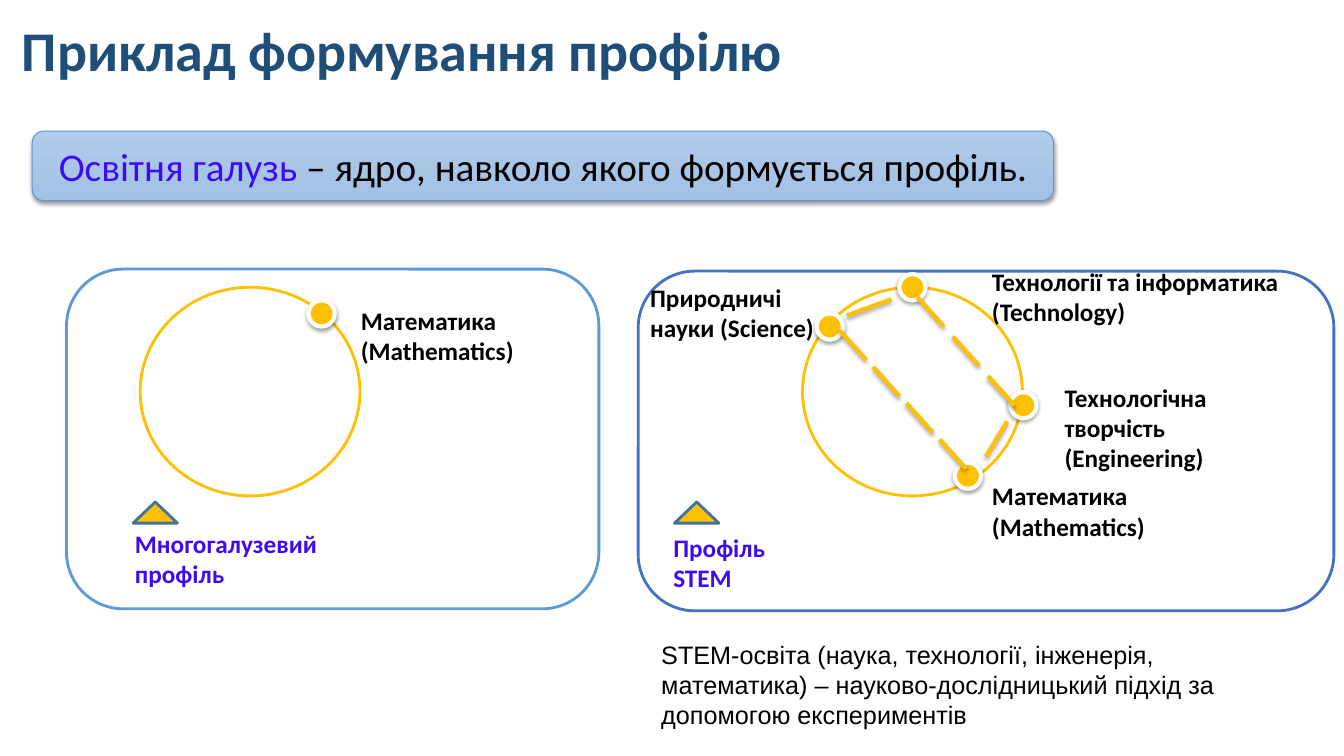
from lxml.etree import SubElement
from pptx import Presentation
from pptx.dml.color import RGBColor
from pptx.enum.shapes import MSO_CONNECTOR as LINK, MSO_SHAPE as KIND
from pptx.enum.text import MSO_ANCHOR as ANCHOR, PP_ALIGN as ALIGN
from pptx.oxml.ns import qn
from pptx.util import Inches, Pt

NAVY = RGBColor(0x1F, 0x4E, 0x79)
VIOLET = RGBColor(0x3D, 0x0A, 0xF6)
BLACK = RGBColor(0, 0, 0)
WHITE = RGBColor(0xFF, 0xFF, 0xFF)
GOLD = RGBColor(0xFF, 0xC0, 0x00)
SKY = RGBColor(0x5B, 0x9B, 0xD5)
BLUE = RGBColor(0x44, 0x72, 0xC4)
STEEL = RGBColor(0x43, 0x72, 0x9D)
PALE = RGBColor(0xB1, 0xCB, 0xE9)
MIST = RGBColor(0xA2, 0xC1, 0xE4)


def add_shade(item, alpha=0, dist=1.6):
    effects = SubElement(item._element.spPr, qn("a:effectLst"))
    if alpha:
        shade = SubElement(effects, qn("a:outerShdw"), blurRad=str(Pt(3.1)),
                           dist=str(Pt(dist)), dir="5400000", rotWithShape="0")
        color = SubElement(shade, qn("a:srgbClr"), val=str(BLACK))
        SubElement(color, qn("a:alpha"), val=str(alpha * 1000))


def add_form(slide, kind, box, fill, line, width=2, alpha=0):
    form = slide.shapes.add_shape(kind, *map(Inches, box))
    if isinstance(fill, RGBColor):
        form.fill.solid()
        form.fill.fore_color.rgb = fill
    else:
        form.fill.gradient()
        form.fill.gradient_angle = 270
        for stop, color, place in zip(form.fill.gradient_stops, fill, (0, 1)):
            stop.color.rgb = color
            stop.position = place
    form.line.color.rgb = line
    form.line.width = Pt(width)
    add_shade(form, alpha)
    return form


def add_run(para, text, size, color, bold=False, font="Calibri"):
    run = para.add_run()
    run.text = text
    run.font.name = font
    run.font.size = Pt(size)
    run.font.bold = bold
    run.font.color.rgb = color


def add_label(slide, box, lines, color=BLACK, size=18, bold=True, font="Calibri"):
    frame = slide.shapes.add_textbox(*map(Inches, box)).text_frame
    frame.word_wrap = True
    for index, line in enumerate(lines):
        para = frame.add_paragraph() if index else frame.paragraphs[0]
        add_run(para, line, size, color, bold, font)


def add_banner(slide):
    banner = add_form(slide, KIND.ROUNDED_RECTANGLE, (0.32, 1.3, 10.13, 0.69),
                      (PALE, MIST), SKY, 0.75, 38)
    frame = banner.text_frame
    frame.word_wrap = True
    frame.vertical_anchor = ANCHOR.MIDDLE
    para = frame.paragraphs[0]
    para.alignment = ALIGN.CENTER
    add_run(para, "Освітня галузь ", 28, VIOLET)
    add_run(para, "– ядро, навколо якого формується профіль.", 28, BLACK)


def add_ring(slide, left, dots):
    add_form(slide, KIND.OVAL, (left, 2.85, 2.18, 2.07), WHITE, GOLD)
    for x, y in dots:
        add_form(slide, KIND.OVAL, (x, y, 0.26, 0.26), GOLD, WHITE, 3, 38)


def add_chord(slide, start, dash, step=(0, 0), count=1):
    for index in range(count):
        x, y = (s + index * gap for s, gap in zip(start, step))
        ends = x, y, x + dash[0], y + dash[1]
        link = slide.shapes.add_connector(LINK.STRAIGHT, *map(Inches, ends))
        link.line.color.rgb = GOLD
        link.line.width = Pt(3)
        add_shade(link, 35, 1.8)


def add_mark(slide, left):
    add_form(slide, KIND.ISOSCELES_TRIANGLE, (left, 4.98, 0.44, 0.21), GOLD, STEEL)


def main():
    deck = Presentation()
    deck.slide_width, deck.slide_height = Inches(13.33), Inches(7.5)
    slide = deck.slides.add_slide(deck.slide_layouts[6])

    add_label(slide, (0.12, 0.11, 8.93, 0.76), ["Приклад формування профілю"], NAVY, 40)
    add_banner(slide)
    for box, line in (((0.66, 2.67, 5.28, 3.37), SKY), ((6.33, 2.69, 6.9, 3.37), BLUE)):
        add_form(slide, KIND.ROUNDED_RECTANGLE, box, WHITE, line)

    maths = ["Математика", "(Mathematics)"]
    add_ring(slide, 1.39, [(3.06, 2.98)])
    add_label(slide, (3.48, 2.98, 1.91, 0.7), maths)
    add_label(slide, (1.24, 5.19, 3.88, 0.7), ["Многогалузевий", "профіль"], VIOLET)
    add_mark(slide, 1.32)

    add_ring(slide, 7.96, [(9.47, 4.59), (10.02, 3.89), (8.92, 2.72), (8.1, 3.11)])
    add_chord(slide, (8.33, 3.28), (0.26, 0.29), (0.33, 0.36), 4)
    add_chord(slide, (8.4, 3.13), (0.44, -0.16))
    add_chord(slide, (9.78, 4.53), (0.21, -0.35))
    add_chord(slide, (9.1, 2.95), (0.26, 0.29), (0.35, 0.39), 3)
    add_label(slide, (9.74, 4.72, 1.91, 0.7), maths)
    add_label(slide, (10.46, 3.74, 1.91, 1), ["Технологічна творчість (Engineering)"])
    add_label(slide, (9.74, 2.59, 3.37, 0.7), ["Технології та інформатика (Technology)"])
    add_label(slide, (6.35, 2.75, 1.91, 0.7), ["Природничі науки (Science)"])
    add_label(slide, (6.58, 5.23, 3.88, 0.7), ["Профіль", "STEM"], VIOLET)
    add_mark(slide, 6.69)

    add_label(slide, (6.46, 6.29, 6.29, 1.01),
              ["STEM-освіта (наука, технології, інженерія, математика) – "
               "науково-дослідницький підхід за допомогою експериментів"],
              bold=False, font="Arial")
    deck.save("out.pptx")


if __name__ == "__main__":
    main()
